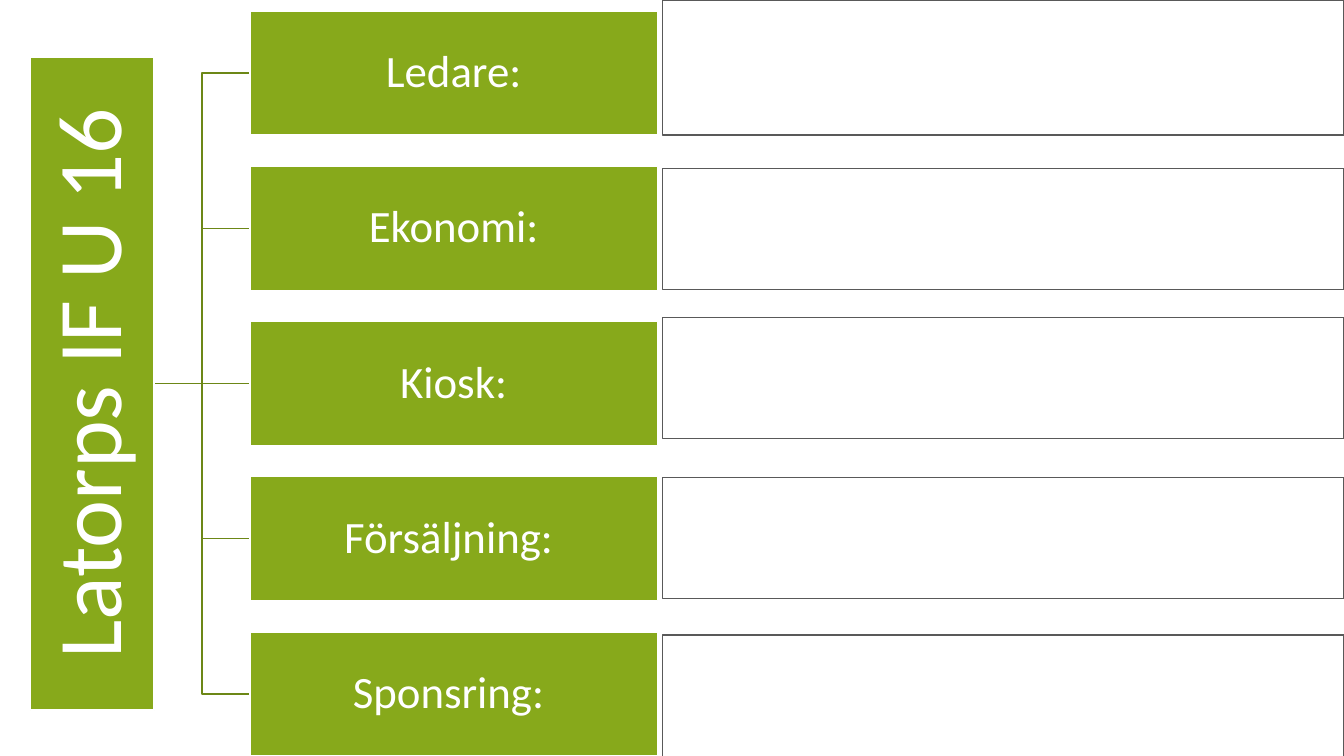
from pptx import Presentation
from pptx.dml.color import RGBColor
from pptx.enum.shapes import MSO_CONNECTOR as Link, MSO_SHAPE as Form
from pptx.enum.text import MSO_ANCHOR as Anchor, PP_ALIGN as Align
from pptx.oxml.ns import qn
from pptx.util import Inches, Pt
from lxml.etree import SubElement

GREEN = RGBColor(0x87, 0xA9, 0x1B)
OLIVE = RGBColor(0x6C, 0x87, 0x16)
GREY = RGBColor(0x59, 0x59, 0x59)
WHITE = RGBColor(0xFF, 0xFF, 0xFF)

WIDE, HIGH = 13.33, 7.5
BAR = 1.23    # height of a role box, width of the club bar
STEP = 1.54   # from one role to the next
ROLES = ["Ledare:", "Ekonomi:", "Kiosk:", "Försäljning: ", "Sponsring: "]
# Top and height of each field; they are spaced by hand
FIELDS = [(0, 1.34), (1.67, 1.2), (3.15, 1.2), (4.74, 1.2), (6.3, 1.23)]


def add_box(slide, box, fill, edge):
    shape = slide.shapes.add_shape(Form.RECTANGLE, *map(Inches, box))
    shape.shadow.inherit = False
    shape.fill.solid()
    shape.fill.fore_color.rgb = fill
    shape.line.color.rgb = edge
    shape.line.width = Pt(1)
    return shape


def add_label(slide, box, text, size, inset):
    shape = add_box(slide, box, GREEN, WHITE)
    frame = shape.text_frame
    frame.word_wrap = True
    frame.vertical_anchor = Anchor.MIDDLE
    frame.margin_left = frame.margin_right = Inches(inset)
    frame.margin_top = frame.margin_bottom = Inches(inset)
    para = frame.paragraphs[0]
    para.alignment = Align.CENTER
    para.line_spacing = 0.9
    run = para.add_run()
    run.text = text
    run.font.name = "Calibri"
    run.font.size = Pt(size)
    run.font.color.rgb = WHITE
    return shape


def add_branch(slide, club, role):
    line = slide.shapes.add_connector(Link.ELBOW, 0, 0, 0, 0)
    line.begin_connect(club, 3)
    line.end_connect(role, 1)
    line.line.color.rgb = OLIVE
    line.line.width = Pt(1)
    SubElement(line._element.spPr, qn("a:effectLst"))
    # Send the branch behind the boxes
    slide.shapes._spTree.insert(2, line._element)


def add_tree(slide, box):
    left, top, width, height = box
    # Club bar, text running upwards
    tall = 6.48
    mid = top + (height - tall) / 2
    club = add_label(slide, (left, mid, BAR, tall), "Latorps IF U 16", 65, 0.05)
    club.text_frame._txBody.bodyPr.set("vert", "vert270")
    # Roles, each on its own branch
    span = 4.04
    for row, name in enumerate(ROLES):
        place = (left + width - span, top + row * STEP, span, BAR)
        add_branch(slide, club, add_label(slide, place, name, 32, 0.02))


def add_fields(slide, left, width):
    for top, height in FIELDS:
        add_box(slide, (left, top, width, height), WHITE, GREY)


def main():
    deck = Presentation()
    deck.slide_width, deck.slide_height = Inches(WIDE), Inches(HIGH)
    slide = deck.slides.add_slide(deck.slide_layouts[6])
    add_tree(slide, (0.3, 0.11, 6.22, 4 * STEP + BAR))
    add_fields(slide, 6.57, WIDE - 6.57)
    deck.save("out.pptx")


if __name__ == "__main__":
    main()
